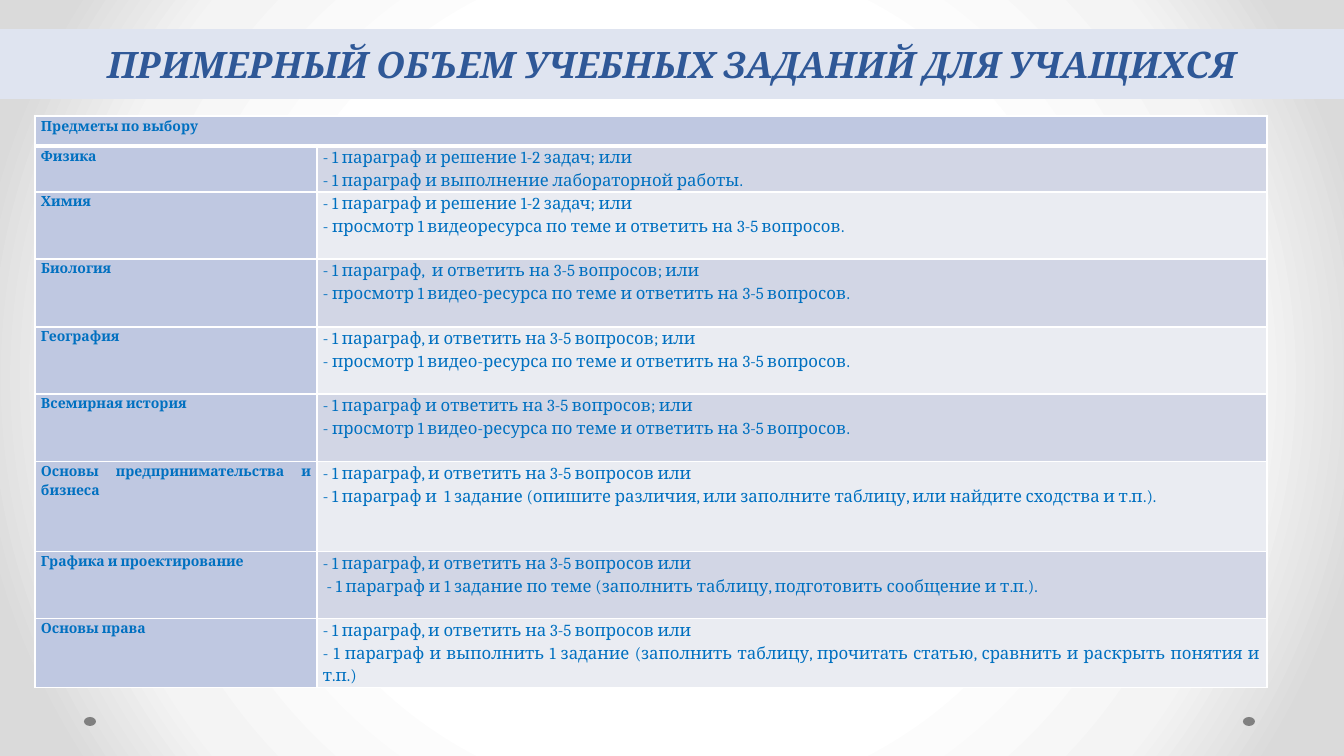
from lxml import etree
from pptx import Presentation
from pptx import util as u
from pptx.dml.color import RGBColor
from pptx.enum import shapes, text
from pptx.oxml import parse_xml
from pptx.oxml.ns import nsdecls, qn

HEADING = "ПРИМЕРНЫЙ ОБЪЕМ УЧЕБНЫХ ЗАДАНИЙ ДЛЯ УЧАЩИХСЯ"
SECTION = "Предметы по выбору"
QUESTIONS = "- 1 параграф, и ответить на 3-5 вопросов"
VIDEO = "- просмотр 1 видео-ресурса по теме и ответить на 3-5 вопросов."
SUBJECTS = [
    ("Физика", 46, "- 1 параграф и решение 1-2 задач; или",
     "- 1 параграф и выполнение лабораторной работы."),
    ("Химия", 67, "- 1 параграф и решение 1-2 задач; или",
     "- просмотр 1 видеоресурса по теме и ответить на 3-5 вопросов."),
    ("Биология", 68, "- 1 параграф,  и ответить на 3-5 вопросов; или", VIDEO),
    ("География", 67, QUESTIONS + "; или", VIDEO),
    ("Всемирная история", 68, "- 1 параграф и ответить на 3-5 вопросов; или", VIDEO),
    ("Основы предпринимательства и бизнеса", 90, QUESTIONS + " или",
     "- 1 параграф и  1 задание (опишите различия, или заполните таблицу, "
     "или найдите сходства и т.п.)."),
    ("Графика и проектирование", 67, QUESTIONS + " или",
     " - 1 параграф и 1 задание по теме (заполнить таблицу, подготовить сообщение и т.п.)."),
    ("Основы права", 69, QUESTIONS + " или",
     "- 1 параграф и выполнить 1 задание (заполнить таблицу, прочитать статью, "
     "сравнить и раскрыть понятия и т.п.)"),
]
SECTION_HEIGHT = 30
COLUMN_WIDTHS = [282, 950]
BANDS = ["D2D6E5", "EAECF2"]


def px(length):
    return u.Emu(round(length * 914400 / 100.8))


def colour(code):
    return RGBColor.from_string(code)


class SubjectSlide:
    """Draws the elements of one slide in a shared style."""

    font = "Cambria"
    ink = "0070C0"
    label_fill = "BFC8E1"

    def __init__(self, deck):
        self.slide = deck.slides.add_slide(deck.slide_layouts[5])

    def backdrop(self, stops):
        marks = "".join(
            f'<a:gs pos="{position * 1000}"><a:srgbClr val="{code}"/></a:gs>'
            for position, code in stops)
        self.slide.element.cSld.insert(0, parse_xml(
            f'<p:bg {nsdecls("p", "a")}><p:bgPr><a:gradFill rotWithShape="1">'
            f'<a:gsLst>{marks}</a:gsLst><a:path path="circle">'
            '<a:fillToRect l="50000" t="50000" r="50000" b="50000"/></a:path>'
            '</a:gradFill><a:effectLst/></p:bgPr></p:bg>'))

    def dot(self, left, top):
        dot = self.slide.shapes.add_shape(
            shapes.MSO_SHAPE.OVAL, px(left), px(top), px(12), px(9))
        dot.shadow.inherit = False
        dot.fill.solid()
        dot.fill.fore_color.rgb = colour("808080")
        dot.line.fill.background()

    def style(self, paragraph, size, code, bold, italic=False):
        font = paragraph.font
        font.name, font.size = self.font, u.Pt(size)
        font.bold, font.italic = bold, italic
        font.color.rgb = colour(code)

    def title(self, wording, top, width, height):
        banner = self.slide.shapes.title
        banner.left, banner.top = px(0), px(top)
        banner.width, banner.height = px(width), px(height)
        banner.fill.solid()
        banner.fill.fore_color.rgb = colour("DFE4F0")
        frame = banner.text_frame
        frame.text = wording
        frame.word_wrap = True
        frame.auto_size = text.MSO_AUTO_SIZE.NONE
        frame.vertical_anchor = text.MSO_ANCHOR.MIDDLE
        frame.margin_left = frame.margin_right = 0
        frame.margin_top = frame.margin_bottom = 0
        heading = frame.paragraphs[0]
        heading.alignment = text.PP_ALIGN.CENTER
        self.style(heading, 26, "2F5897", True, True)

    def borders(self, cell, bottom):
        properties = cell._tc.get_or_add_tcPr()
        for side, points in (("L", 1), ("R", 1), ("T", 1), ("B", bottom)):
            edge = etree.SubElement(
                properties, qn(f"a:ln{side}"), w=str(u.Pt(points)))
            paint = etree.SubElement(edge, qn("a:solidFill"))
            etree.SubElement(paint, qn("a:srgbClr"), val="FFFFFF")

    def cell(self, cell, wording, size, bold, fill, bottom=1):
        cell.margin_left = cell.margin_right = px(6)
        cell.margin_top = cell.margin_bottom = 0
        self.borders(cell, bottom)
        cell.fill.solid()
        cell.fill.fore_color.rgb = colour(fill)
        cell.text = wording
        for paragraph in cell.text_frame.paragraphs:
            paragraph.alignment = text.PP_ALIGN.JUSTIFY
            paragraph.line_spacing = 1.15
            self.style(paragraph, size, self.ink, bold)

    def subjects(self, left, top):
        heights = [SECTION_HEIGHT] + [height for _, height, *_ in SUBJECTS]
        table = self.slide.shapes.add_table(
            len(heights), len(COLUMN_WIDTHS), px(left), px(top),
            px(sum(COLUMN_WIDTHS)), px(sum(heights))).table
        table.first_row = table.horz_banding = False
        for column, width in zip(table.columns, COLUMN_WIDTHS):
            column.width = px(width)
        for row, height in zip(table.rows, heights):
            row.height = px(height)
        table.cell(0, 0).merge(table.cell(0, 1))
        for column, wording in enumerate((SECTION, "")):
            self.cell(table.cell(0, column), wording, 10, True, self.label_fill, 3)
        for index, (subject, _, *tasks) in enumerate(SUBJECTS):
            self.cell(table.cell(index + 1, 0), subject, 10, True, self.label_fill)
            self.cell(table.cell(index + 1, 1), "\n".join(tasks), 12, False,
                      BANDS[index % 2])


def main():
    deck = Presentation()
    deck.slide_width, deck.slide_height = px(1344), px(756)
    page = SubjectSlide(deck)
    page.backdrop([(50, "FFFFFF"), (76, "F4F4F4"), (92, "DADADA")])
    for left in (84, 1243):
        page.dot(left, 717)
    page.subjects(35, 116)
    page.title(HEADING, 29, 1344, 70)
    deck.save("out.pptx")


if __name__ == "__main__":
    main()
